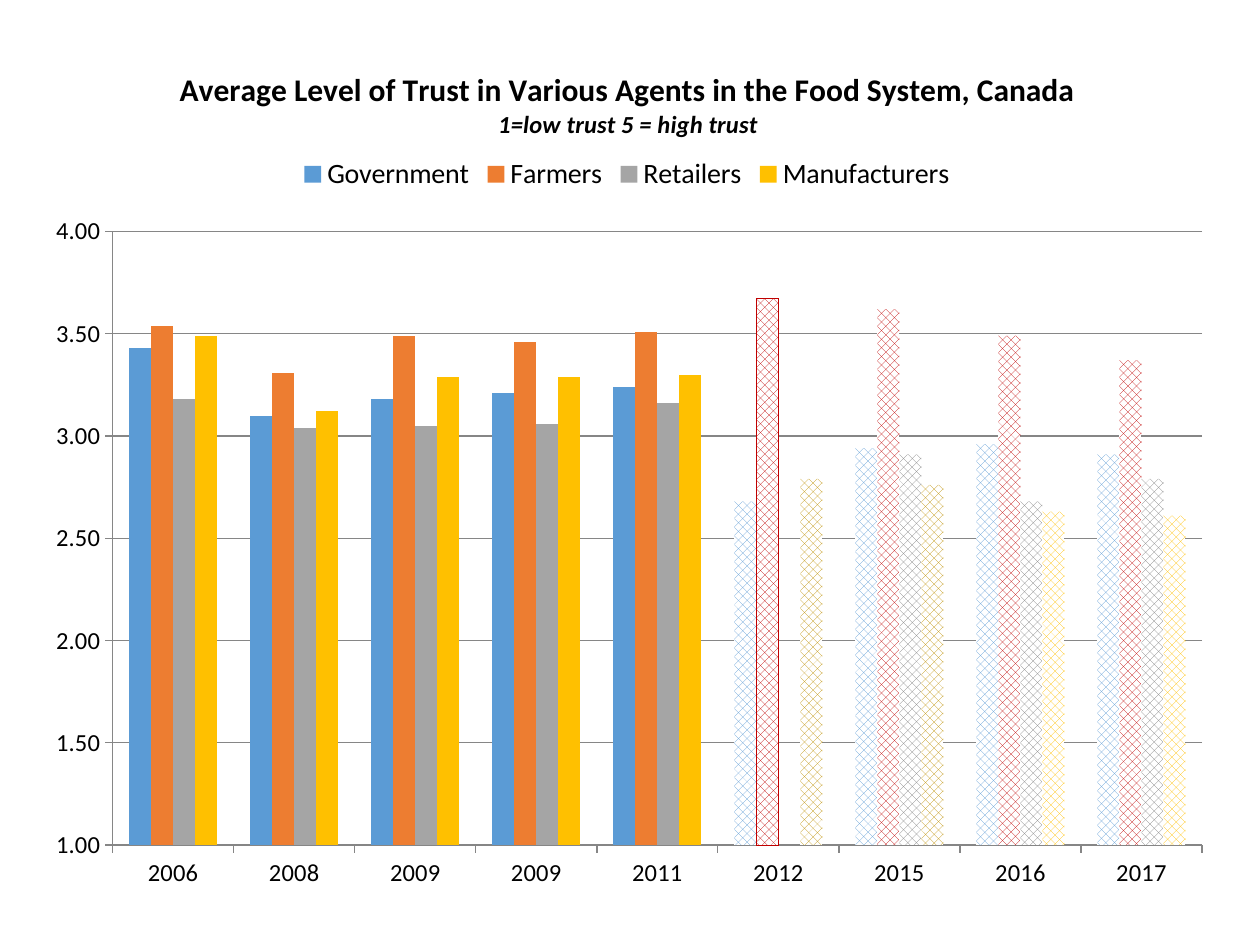
import pptx
import pptx.chart.data
import pptx.dml.color
import pptx.enum.chart
import pptx.enum.dml
import pptx.oxml
import pptx.oxml.ns
import pptx.util

RGBColor = pptx.dml.color.RGBColor
Inches = pptx.util.Inches
Pt = pptx.util.Pt

BLACK = RGBColor(0x00, 0x00, 0x00)
WHITE = RGBColor(0xFF, 0xFF, 0xFF)
LINE = RGBColor(0x86, 0x86, 0x86)
BLUE = RGBColor(0x5B, 0x9B, 0xD5)
ORANGE = RGBColor(0xED, 0x7D, 0x31)
RED = RGBColor(0xC0, 0x00, 0x00)
GRAY = RGBColor(0xA5, 0xA5, 0xA5)
DARK = RGBColor(0x7C, 0x7C, 0x7C)
GOLD = RGBColor(0xFF, 0xC0, 0x00)
BROWN = RGBColor(0xBF, 0x90, 0x00)

YEARS = ["2006", "2008", "2009", "2009", "2011", "2012", "2015", "2016", "2017"]
# Name, values, solid colour, pattern colour by point
AGENTS = [
    ("Government", [3.43, 3.1, 3.18, 3.21, 3.24, 2.68, 2.94, 2.96, 2.91],
     BLUE, {5: BLUE, 6: BLUE, 7: BLUE, 8: BLUE}),
    ("Farmers", [3.54, 3.31, 3.49, 3.46, 3.51, 3.67, 3.62, 3.49, 3.37],
     ORANGE, {5: RED, 6: RED, 7: RED, 8: RED}),
    ("Retailers", [3.18, 3.04, 3.05, 3.06, 3.16, None, 2.91, 2.68, 2.79],
     GRAY, {6: DARK, 7: DARK, 8: DARK}),
    ("Manufacturers", [3.49, 3.12, 3.29, 3.29, 3.3, 2.79, 2.76, 2.63, 2.61],
     GOLD, {5: BROWN, 6: BROWN, 7: GOLD, 8: GOLD}),
]


def place(part, inner=False, **box):
    """Give a chart part a manual layout, in fractions of the chart."""
    tags = '<c:layoutTarget val="inner"/>' if inner else ""
    tags += "".join(f'<c:{k}Mode val="edge"/>' for k in box if k in "xy")
    tags += "".join(f'<c:{k} val="{v}"/>' for k, v in box.items())
    for old in part.findall(pptx.oxml.ns.qn("c:layout")):
        part.remove(old)
    node = pptx.oxml.parse_xml(
        f'<c:layout {pptx.oxml.ns.nsdecls("c")}>'
        f"<c:manualLayout>{tags}</c:manualLayout></c:layout>")
    if inner:
        part.insert(0, node)
    else:
        part.find(pptx.oxml.ns.qn("c:overlay")).addprevious(node)


prs = pptx.Presentation()
prs.slide_width = Inches(10)
prs.slide_height = Inches(7.5)
slide = prs.slides.add_slide(prs.slide_layouts[6])

# Chart data
data = pptx.chart.data.CategoryChartData(number_format="0.00")
for year in YEARS:
    data.add_category(year)
for name, vals, fill, marks in AGENTS:
    data.add_series(name, vals)
frame = slide.shapes.add_chart(
    pptx.enum.chart.XL_CHART_TYPE.COLUMN_CLUSTERED,
    Inches(0.26), Inches(0.31), Inches(9.47), Inches(6.88), data)
chart = frame.chart
chart.font.name = "Calibri"
chart.font.size = Pt(10)
chart.font.color.rgb = BLACK

# Title in two lines
chart.has_title = True
text = chart.chart_title.text_frame
lines = [
    ("Average Level of Trust in Various Agents in the Food System, Canada ", 18, False),
    ("1=low trust 5 = high trust ", 14, True),
]
for i, (words, size, slant) in enumerate(lines):
    para = text.add_paragraph() if i else text.paragraphs[0]
    run = para.add_run()
    run.text = words
    run.font.name = "Calibri"
    run.font.size = Pt(size)
    run.font.bold = True
    run.font.italic = slant
    run.font.color.rgb = BLACK
chart.chart_title.include_in_layout = False
title = chart.chart_title._element
if title.find(pptx.oxml.ns.qn("c:overlay")) is not None:
    place(title, x=0.12, y=0.03)

# Legend
chart.has_legend = True
chart.legend.position = pptx.enum.chart.XL_LEGEND_POSITION.TOP
chart.legend.include_in_layout = False
chart.legend.font.size = Pt(16)
chart.legend.font.name = "Calibri"
chart.legend.font.color.rgb = BLACK
place(chart.legend._element, x=0.22, y=0.13)

# Axes and plot area
value = chart.value_axis
value.minimum_scale = 1
value.maximum_scale = 4
value.major_unit = 0.5
value.has_major_gridlines = True
value.major_gridlines.format.line.color.rgb = LINE
value.tick_labels.number_format = "0.00"
value.tick_labels.number_format_is_linked = False
for axis in (chart.category_axis, value):
    axis.major_tick_mark = pptx.enum.chart.XL_TICK_MARK.OUTSIDE
    axis.format.line.color.rgb = LINE
    axis.tick_labels.font.size = Pt(14)
    axis.tick_labels.font.name = "Calibri"
    axis.tick_labels.font.color.rgb = BLACK
place(chart.plots[0]._element.getparent(), inner=True,
      x=0.067, y=0.222, w=0.913, h=0.708)

# Columns: solid first, patterned for the later years
plot = chart.plots[0]
plot.gap_width = 150
plot.overlap = 0
plot.vary_by_categories = False
for bars, (name, vals, fill, marks) in zip(plot.series, AGENTS):
    bars.format.fill.solid()
    bars.format.fill.fore_color.rgb = fill
    bars.format.line.fill.background()
    for i, color in marks.items():
        look = bars.points[i].format
        look.fill.patterned()
        look.fill.pattern = pptx.enum.dml.MSO_PATTERN.PERCENT_50
        look.fill.fore_color.rgb = color
        look.fill.back_color.rgb = WHITE
        if name == "Farmers" and YEARS[i] == "2012":
            look.line.color.rgb = RED
        else:
            look.line.fill.background()

prs.save("out.pptx")
